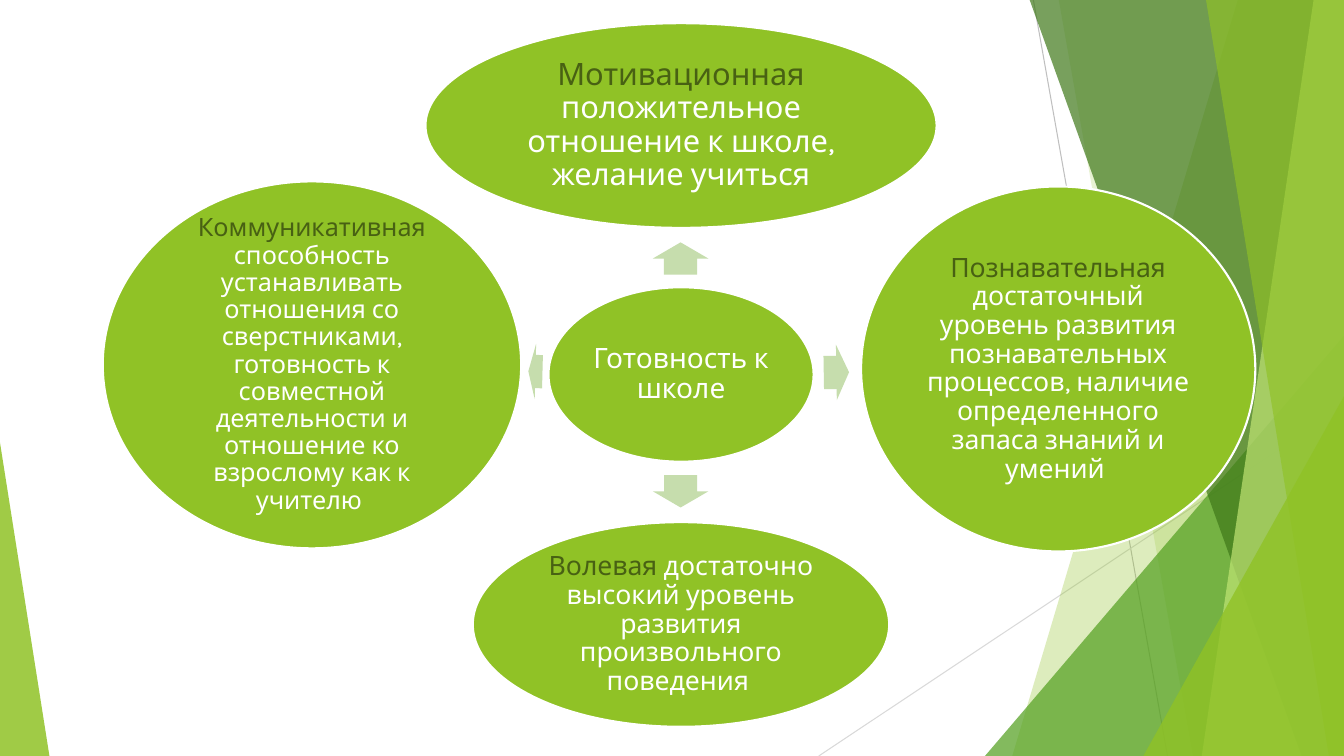
from lxml.etree import SubElement
from pptx import Presentation
from pptx.dml.color import RGBColor
from pptx.enum.shapes import MSO_CONNECTOR, MSO_SHAPE
from pptx.enum.text import MSO_ANCHOR, PP_ALIGN
from pptx.oxml.ns import qn
from pptx.util import Inches, Pt

W, H = Inches(13.33), Inches(7.5)
FONT = "Karla"
COLORS = {
    "lime": "90C226", "green": "54A021", "forest": "3F7819", "pale": "C0E474",
    "arrow": "C6DDAD", "title": "486113", "white": "FFFFFF",
    "line_dark": "BFBFBF", "line_light": "D9D9D9",
}

# Facets, back to front: top left x, bottom left x, colour, opacity (%)
BACK_FACETS = [(92.12, 75.32, "lime", 30), (78.77, 88.75, "lime", 20)]
FRONT_FACETS = [
    (76.59, 96.85, "forest", 70),
    (97.75, 89.42, "pale", 70),
    (89.72, 98.87, "lime", 65),
]

# Ellipses: box, size, title, description
ELLIPSES = [
    ((40.81, 38, 19.73, 23.07), 20, "", "Готовность к школе"),
    ((31.66, 3.07, 38.03, 27.07), 22, "Мотивационная",
     " положительное отношение к школе, желание учиться"),
    ((64.07, 24.67, 29.33, 48.27), 19, "Познавательная",
     " достаточный уровень развития познавательных процессов, "
     "наличие определенного запаса знаний и умений "),
    ((35.18, 69.07, 30.98, 27.07), 19, "Волевая",
     " достаточно высокий уровень развития произвольного поведения "),
    ((7.65, 24, 31.13, 48.53), 18, "Коммуникативная",
     " способность устанавливать отношения со сверстниками, готовность к "
     "совместной деятельности и отношение ко взрослому как к учителю "),
]

# Arrows: box before rotation, rotation
ARROWS = [
    ((49.44, 30.53, 2.4, 7.33), 270),
    ((61.29, 45.6, 1.88, 7.33), 359.1),
    ((49.44, 61.33, 2.4, 7.33), 90),
    ((39.31, 45.47, 1.05, 7.33), 181.5),
]


def rgb(name):
    return RGBColor.from_string(COLORS[name])


def x(share):
    """Horizontal length from a percentage of the slide width."""
    return round(W * share / 100)


def y(share):
    """Vertical length from a percentage of the slide height."""
    return round(H * share / 100)


def paint(sp, color, opacity=100):
    sp.shadow.inherit = False
    sp.line.fill.background()
    sp.fill.solid()
    sp.fill.fore_color.rgb = rgb(color)
    if opacity < 100:
        clr = sp.fill._xPr.find(qn("a:solidFill"))[0]
        SubElement(clr, qn("a:alpha"), val=str(opacity * 1000))


def add_preset(s, kind, box, color, opacity=100):
    left, top, width, height = box
    sp = s.shapes.add_shape(kind, x(left), y(top), x(width), y(height))
    paint(sp, color, opacity)
    return sp


def add_line(s, start, end, color):
    cx = s.shapes.add_connector(MSO_CONNECTOR.STRAIGHT, x(start[0]), y(start[1]),
                                x(end[0]), y(end[1]))
    cx.line.color.rgb = rgb(color)
    cx.line.width = Pt(0.75)
    SubElement(cx._element.spPr, qn("a:effectLst"))


def add_facet(s, top_x, bottom_x, color, opacity):
    """Full-height panel with a slanted left edge, reaching the right border."""
    top = y(-0.13)
    fb = s.shapes.build_freeform(x(top_x), top)
    fb.add_line_segments([(W, top), (W, H), (x(bottom_x), H)], close=True)
    paint(fb.convert_to_shape(), color, opacity)


def add_corner(s, box, apex, color, opacity):
    sp = add_preset(s, MSO_SHAPE.ISOSCELES_TRIANGLE, box, color, opacity)
    sp.adjustments[0] = apex


def add_ellipse(s, box, size, title, description):
    sp = add_preset(s, MSO_SHAPE.OVAL, box, "lime")
    sp.line.color.rgb = rgb("white")
    sp.line.width = Pt(1.5)
    tf = sp.text_frame
    tf.word_wrap = True
    tf.vertical_anchor = MSO_ANCHOR.MIDDLE
    tf.margin_left = tf.margin_right = tf.margin_top = tf.margin_bottom = Inches(0.03)
    p = tf.paragraphs[0]
    p.alignment = PP_ALIGN.CENTER
    p.line_spacing = 0.9
    for text, color in ((title, "title"), (description, "white")):
        if text:
            r = p.add_run()
            r.text = text
            r.font.name = FONT
            r.font.size = Pt(size)
            r.font.color.rgb = rgb(color)


def add_arrow(s, box, rotation):
    sp = add_preset(s, MSO_SHAPE.RIGHT_ARROW, box, "arrow")
    sp.adjustments[0] = 0.6
    sp.adjustments[1] = 0.5
    sp.rotation = rotation


def add_background(s):
    add_line(s, (76.89, 0), (86.87, 100), "line_dark")
    add_line(s, (100, 53.73), (60.92, 100), "line_light")
    for facet in BACK_FACETS:
        add_facet(s, *facet)
    add_corner(s, (73.29, 44.4, 26.71, 55.6), 1, "green", 72)
    for facet in FRONT_FACETS:
        add_facet(s, *facet)
    add_corner(s, (85.07, 52.4, 14.93, 47.6), 1, "lime", 80)
    add_corner(s, (0, 58.53, 3.68, 41.47), 0, "lime", 85)


def main():
    prs = Presentation()
    prs.slide_width, prs.slide_height = W, H
    s = prs.slides.add_slide(prs.slide_layouts[6])
    add_background(s)
    for ellipse in ELLIPSES:
        add_ellipse(s, *ellipse)
    for arrow in ARROWS:
        add_arrow(s, *arrow)
    prs.save("out.pptx")


if __name__ == "__main__":
    main()
